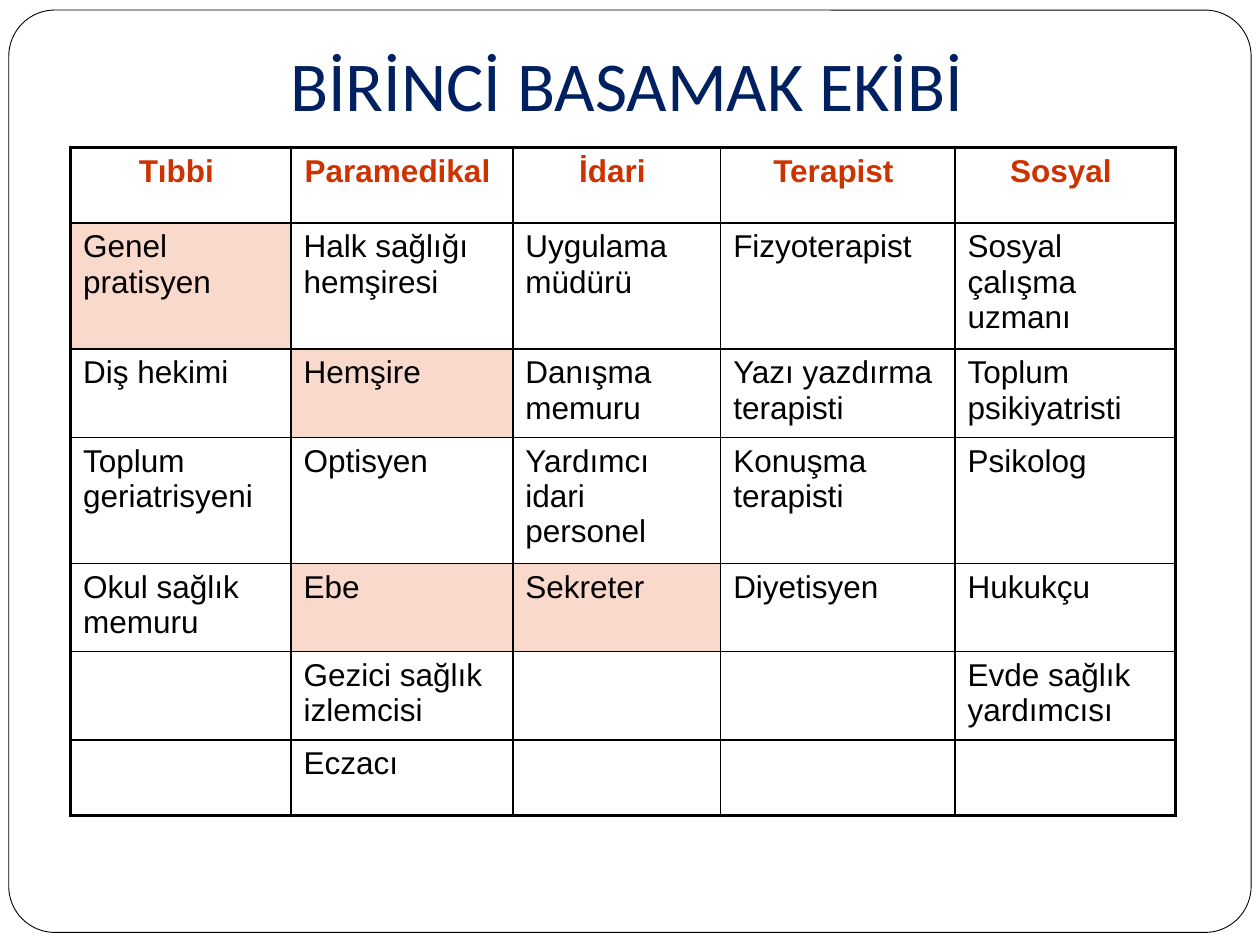
import pptx
import pptx.util
import pptx.dml.color
import pptx.enum.shapes
import pptx.enum.text
import pptx.oxml.ns
from lxml import etree

Inches = pptx.util.Inches
Pt = pptx.util.Pt
RGBColor = pptx.dml.color.RGBColor
PP_ALIGN = pptx.enum.text.PP_ALIGN
MSO_ANCHOR = pptx.enum.text.MSO_ANCHOR

BLACK = RGBColor(0x00, 0x00, 0x00)
WHITE = RGBColor(0xFF, 0xFF, 0xFF)
NAVY = RGBColor(0x00, 0x20, 0x60)
RED = RGBColor(0xCC, 0x33, 0x00)
PEACH = RGBColor(0xFA, 0xD9, 0xCD)

THIN, THICK = 1, 2.25
COLUMN_WIDTHS = [1.75, 1.76, 1.65, 1.86, 1.75]
ROW_HEIGHTS = [0.6] + [0.64] * 5 + [0.6]
TEAM = [
    ["Tıbbi ", "Paramedikal ", "İdari ", "Terapist ", "Sosyal "],
    ["Genel pratisyen", "Halk sağlığı hemşiresi", "Uygulama müdürü",
     "Fizyoterapist", "Sosyal çalışma uzmanı"],
    ["Diş hekimi", "Hemşire", "Danışma memuru",
     "Yazı yazdırma terapisti", "Toplum psikiyatristi"],
    ["Toplum geriatrisyeni", "Optisyen", "Yardımcı idari personel",
     "Konuşma terapisti", "Psikolog"],
    ["Okul sağlık memuru", "Ebe", "Sekreter", "Diyetisyen", "Hukukçu"],
    ["", "Gezici sağlık izlemcisi", "", "", "Evde sağlık yardımcısı"],
    ["", "Eczacı", "", "", ""],
]
CORE_TEAM = {"Genel pratisyen", "Hemşire", "Ebe", "Sekreter"}


def set_font(paragraph, name, size, color, bold=False):
    font = paragraph.font
    font.name = name
    font.size = Pt(size)
    font.bold = bold
    font.color.rgb = color


def add_frame(slide):
    frame = slide.shapes.add_shape(
        pptx.enum.shapes.MSO_SHAPE.ROUNDED_RECTANGLE,
        Inches(0.07), Inches(0.08), Inches(9.86), Inches(7.32))
    frame.adjustments[0] = 0.05
    frame.shadow.inherit = False
    frame.fill.solid()
    frame.fill.fore_color.rgb = WHITE
    frame.line.color.rgb = BLACK
    frame.line.width = Pt(0.5)


def add_title(slide, text):
    title = slide.shapes.add_textbox(
        Inches(1.14), Inches(0.13), Inches(7.67), Inches(0.97))
    text_frame = title.text_frame
    text_frame.word_wrap = True
    text_frame.vertical_anchor = MSO_ANCHOR.BOTTOM
    text_frame.margin_bottom = Inches(0.1)
    paragraph = text_frame.paragraphs[0]
    paragraph.text = text
    paragraph.alignment = PP_ALIGN.CENTER
    set_font(paragraph, "Calibri", 40, NAVY)


def set_borders(cell, widths):
    """Draw the left, right, top and bottom borders, in that order."""
    qn = pptx.oxml.ns.qn
    properties = cell._tc.get_or_add_tcPr()
    for side, width in zip("LRTB", widths):
        line = etree.SubElement(properties, qn(f"a:ln{side}"), w=str(Pt(width)))
        fill = etree.SubElement(line, qn("a:solidFill"))
        etree.SubElement(fill, qn("a:srgbClr"), val=str(BLACK))


def fill_cell(cell, text, is_header):
    paragraph = cell.text_frame.paragraphs[0]
    paragraph.text = text
    paragraph.alignment = PP_ALIGN.CENTER if is_header else PP_ALIGN.LEFT
    set_font(paragraph, "Arial", 18, RED if is_header else BLACK, is_header)
    if text in CORE_TEAM:
        cell.fill.solid()
        cell.fill.fore_color.rgb = PEACH
    else:
        cell.fill.background()


def add_team_table(slide):
    last_row, last_column = len(ROW_HEIGHTS) - 1, len(COLUMN_WIDTHS) - 1
    table = slide.shapes.add_table(
        len(ROW_HEIGHTS), len(COLUMN_WIDTHS), Inches(0.56), Inches(1.17),
        Inches(sum(COLUMN_WIDTHS)), Inches(sum(ROW_HEIGHTS))).table
    table.first_row = False
    table.horz_banding = False
    for column, width in zip(table.columns, COLUMN_WIDTHS):
        column.width = Inches(width)
    for row, height in zip(table.rows, ROW_HEIGHTS):
        row.height = Inches(height)

    # Thick outer edges, thin inner grid
    for i, texts in enumerate(TEAM):
        for j, text in enumerate(texts):
            cell = table.cell(i, j)
            outer = (j == 0, j == last_column, i == 0, i == last_row)
            set_borders(cell, [THICK if edge else THIN for edge in outer])
            fill_cell(cell, text, is_header=i == 0)


def main():
    presentation = pptx.Presentation()
    presentation.slide_width = Inches(10)
    presentation.slide_height = Inches(7.5)
    slide = presentation.slides.add_slide(presentation.slide_layouts[6])
    add_frame(slide)
    add_title(slide, "BİRİNCİ BASAMAK EKİBİ")
    add_team_table(slide)
    presentation.save("out.pptx")


if __name__ == "__main__":
    main()
